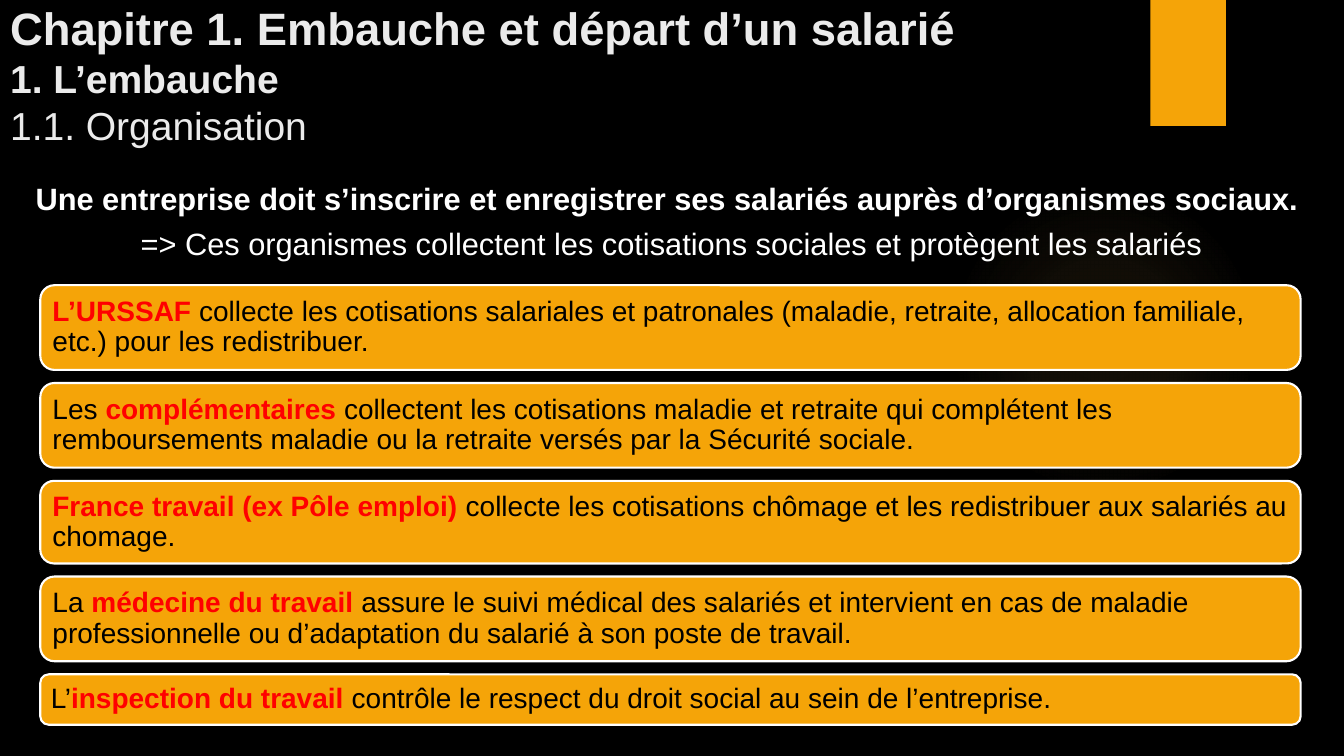
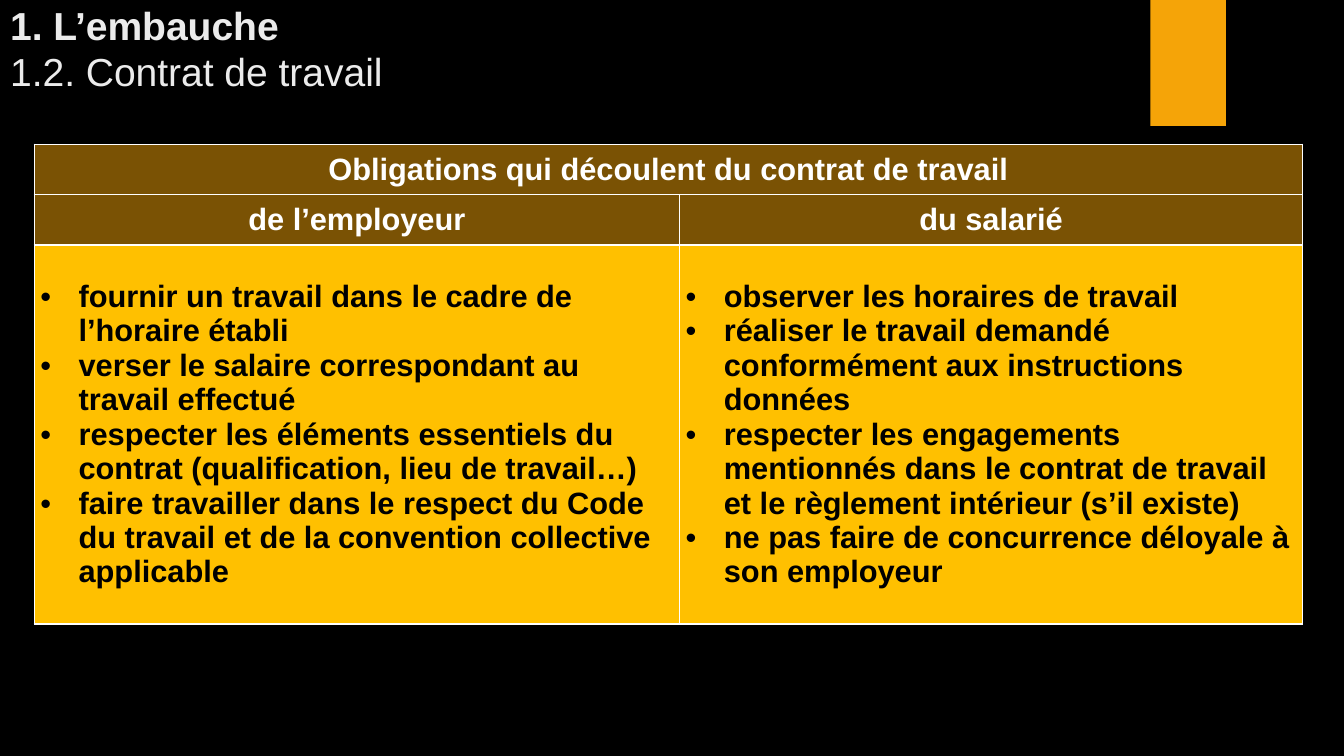
from lxml import etree
from pptx import Presentation
from pptx import util as u
from pptx.dml.color import RGBColor
from pptx.enum import shapes, text
from pptx.oxml import parse_xml
from pptx.oxml.ns import nsdecls, qn

BLACK = RGBColor(0x00, 0x00, 0x00)
WHITE = RGBColor(0xFF, 0xFF, 0xFF)
PALE = RGBColor(0xEB, 0xEB, 0xEB)
RED = RGBColor(0xFF, 0x00, 0x00)
ORANGE = RGBColor(0xF5, 0xA4, 0x08)
BROWN = RGBColor(0x7A, 0x52, 0x04)
AMBER = RGBColor(0xFF, 0xC0, 0x00)
HALO = RGBColor(0xFA, 0xC9, 0x6A)
FONT = "Arial"
CHAPTER, SECTION, INTRO, BODY = 32.4, 27.9, 22, 20
LEFT, CENTER = text.PP_ALIGN.LEFT, text.PP_ALIGN.CENTER
MIDDLE = text.MSO_ANCHOR.MIDDLE


def px(n):
    """Convert px (100 to the inch) to EMU."""
    return u.Emu(n * 9144)


class Deck:
    """Shared style and the slide being built."""

    def __init__(self):
        self.prs = Presentation()
        self.prs.slide_width, self.prs.slide_height = px(1333), px(750)
        fill = self.prs.slide_master.background.fill
        fill.solid()
        fill.fore_color.rgb = BLACK
        self.s = None

    def slide(self, title_height, *title_lines):
        """Start a slide; each title line is (text, size, bold)."""
        self.s = self.prs.slides.add_slide(self.prs.slide_layouts[5])
        self.halo()
        self.shape(shapes.MSO_SHAPE.RECTANGLE, 1141, 0, 75, 125, ORANGE)
        title = self.s.shapes.title
        title.left, title.top = px(0), px(0)
        title.width, title.height = px(1123), px(title_height)
        tf = title.text_frame
        tf.auto_size = text.MSO_AUTO_SIZE.NONE
        tf.vertical_anchor = text.MSO_ANCHOR.BOTTOM
        tf.text = "\n".join(line for line, _, _ in title_lines)
        for p, (_, size, bold) in zip(tf.paragraphs, title_lines):
            p.alignment = LEFT
            self.style(p.runs[0], size, PALE, bold)

    def style(self, r, size, color, bold=False):
        r.font.name, r.font.size = FONT, u.Pt(size)
        r.font.bold, r.font.color.rgb = bold, color

    def shape(self, kind, x, y, w, h, color):
        sp = self.s.shapes.add_shape(kind, px(x), px(y), px(w), px(h))
        sp.shadow.inherit = False
        sp.fill.solid()
        sp.fill.fore_color.rgb = color
        sp.line.fill.background()
        return sp

    def halo(self):
        """Faint glow fading out from its centre."""
        sp = self.shape(shapes.MSO_SHAPE.OVAL, 941, 183, 308, 308, HALO)
        stops = "".join(
            f'<a:gs pos="{pos}000"><a:srgbClr val="{HALO}">'
            f'<a:alpha val="{alpha}000"/></a:srgbClr></a:gs>'
            for pos, alpha in ((0, 7), (36, 6), (69, 0)))
        solid = sp.fill._xPr.find(qn("a:solidFill"))
        solid.getparent().replace(solid, parse_xml(
            f'<a:gradFill {nsdecls("a")}><a:gsLst>{stops}</a:gsLst>'
            '<a:path path="circle"><a:fillToRect l="50000" t="50000" '
            'r="50000" b="50000"/></a:path></a:gradFill>'))

    def intro(self, x, y, w, h, lines):
        """Centred text; each line is (text, bold)."""
        tf = self.s.shapes.add_textbox(px(x), px(y), px(w), px(h)).text_frame
        tf.word_wrap = True
        tf.text = "\n".join(line for line, _ in lines)
        for i, (p, (_, bold)) in enumerate(zip(tf.paragraphs, lines)):
            p.alignment = CENTER
            if i:
                p.space_before = u.Pt(6)
            self.style(p.runs[0], INTRO, WHITE, bold)

    def card(self, x, y, w, h, before, key, after):
        """Rounded box whose key words stand out in red."""
        sp = self.shape(shapes.MSO_SHAPE.ROUNDED_RECTANGLE, x, y, w, h, ORANGE)
        sp.line.color.rgb, sp.line.width = WHITE, u.Pt(1.5)
        tf = sp.text_frame
        tf.word_wrap, tf.vertical_anchor = True, MIDDLE
        tf.margin_left = tf.margin_right = px(8)
        tf.margin_top = tf.margin_bottom = px(8)
        p = tf.paragraphs[0]
        p.alignment, p.line_spacing = LEFT, 0.9
        for part, color in ((before, BLACK), (key, RED), (after, BLACK)):
            if part:
                r = p.add_run()
                r.text = part
                self.style(r, BODY, color, color == RED)

    def table(self, x, y, widths, heights):
        table = self.s.shapes.add_table(
            len(heights), len(widths), px(x), px(y),
            px(sum(widths)), px(sum(heights))).table
        for column, w in zip(table.columns, widths):
            column.width = px(w)
        for row, h in zip(table.rows, heights):
            row.height = px(h)
        return table

    def cell(self, cell, lines, fill, color, bullets=False):
        cell.fill.solid()
        cell.fill.fore_color.rgb = fill
        self.borders(cell)
        cell.vertical_anchor = MIDDLE
        cell.margin_left = cell.margin_right = px(6)
        cell.margin_top = cell.margin_bottom = 0
        tf = cell.text_frame
        tf.text = "\n".join(lines)
        for p in tf.paragraphs:
            p.alignment = LEFT if bullets else CENTER
            if bullets:
                pPr = p._p.get_or_add_pPr()
                pPr.set("marL", str(px(38)))
                pPr.set("indent", str(-px(38)))
                etree.SubElement(pPr, qn("a:buFont")).set("typeface", FONT)
                etree.SubElement(pPr, qn("a:buChar")).set("char", "•")
            for r in p.runs:
                self.style(r, INTRO, color, True)

    def borders(self, cell):
        tcPr = cell._tc.get_or_add_tcPr()
        for i, side in enumerate("LRTB"):
            tcPr.insert(i, parse_xml(
                f'<a:ln{side} {nsdecls("a")} w="{u.Pt(1)}"><a:solidFill>'
                f'<a:srgbClr val="{WHITE}"/></a:solidFill></a:ln{side}>'))


ORGANISMS = [
    (84, "", "L’URSSAF", " collecte les cotisations salariales et patronales "
     "(maladie, retraite, allocation familiale, etc.) pour les redistribuer."),
    (84, "Les ", "complémentaires", " collectent les cotisations maladie et "
     "retraite qui complétent les remboursements maladie ou la retraite versés "
     "par la Sécurité sociale."),
    (82, "", "France travail (ex Pôle emploi) ", "collecte les cotisations "
     "chômage et les redistribuer aux salariés au chomage."),
    (84, "La ", "médecine du travail", " assure le suivi médical des salariés "
     "et intervient en cas de maladie professionnelle ou d’adaptation du "
     "salarié à son poste de travail."),
    (50, "L’", "inspection du travail", " contrôle le respect du droit social "
     "au sein de l’entreprise."),
]

OBLIGATIONS = {
    "de l’employeur": [
        "fournir un travail dans le cadre de l’horaire établi",
        "verser le salaire correspondant au travail effectué",
        "respecter les éléments essentiels du contrat (qualification, lieu de "
        "travail…)",
        "faire travailler dans le respect du Code du travail et de la "
        "convention collective applicable",
    ],
    "du salarié": [
        "observer les horaires de travail",
        "réaliser le travail demandé conformément aux instructions données",
        "respecter les engagements mentionnés dans le contrat de travail et le "
        "règlement intérieur (s’il existe)",
        "ne pas faire de concurrence déloyale à son employeur",
    ],
}


def organisation(deck):
    deck.slide(152, ("Chapitre 1. Embauche et départ d’un salarié", CHAPTER, True),
               ("1. L’embauche", SECTION, True),
               ("1.1. Organisation", SECTION, False))
    deck.intro(3, 173, 1326, 93, [
        ("Une entreprise doit s’inscrire et enregistrer ses salariés auprès "
         "d’organismes sociaux. ", True),
        ("=> Ces organismes collectent les cotisations sociales et protègent "
         "les salariés", False)])
    y, gap = 283, 13
    for h, *parts in ORGANISMS:
        deck.card(40, y, 1250, h, *parts)
        y += h + gap


def contract(deck):
    deck.slide(99, ("1. L’embauche", SECTION, True),
               ("1.2. Contrat de travail", SECTION, False))
    table = deck.table(34, 143, (640, 618), (50, 50, 376))
    heading = "Obligations qui découlent du contrat de travail"
    for col, (party, duties) in enumerate(OBLIGATIONS.items()):
        deck.cell(table.cell(0, col), [] if col else [heading], BROWN, WHITE)
        deck.cell(table.cell(1, col), [party], BROWN, WHITE)
        deck.cell(table.cell(2, col), duties, AMBER, BLACK, bullets=True)
    table.cell(0, 0).merge(table.cell(0, 1))


def main():
    deck = Deck()
    organisation(deck)
    contract(deck)
    deck.prs.save("out.pptx")


if __name__ == "__main__":
    main()
